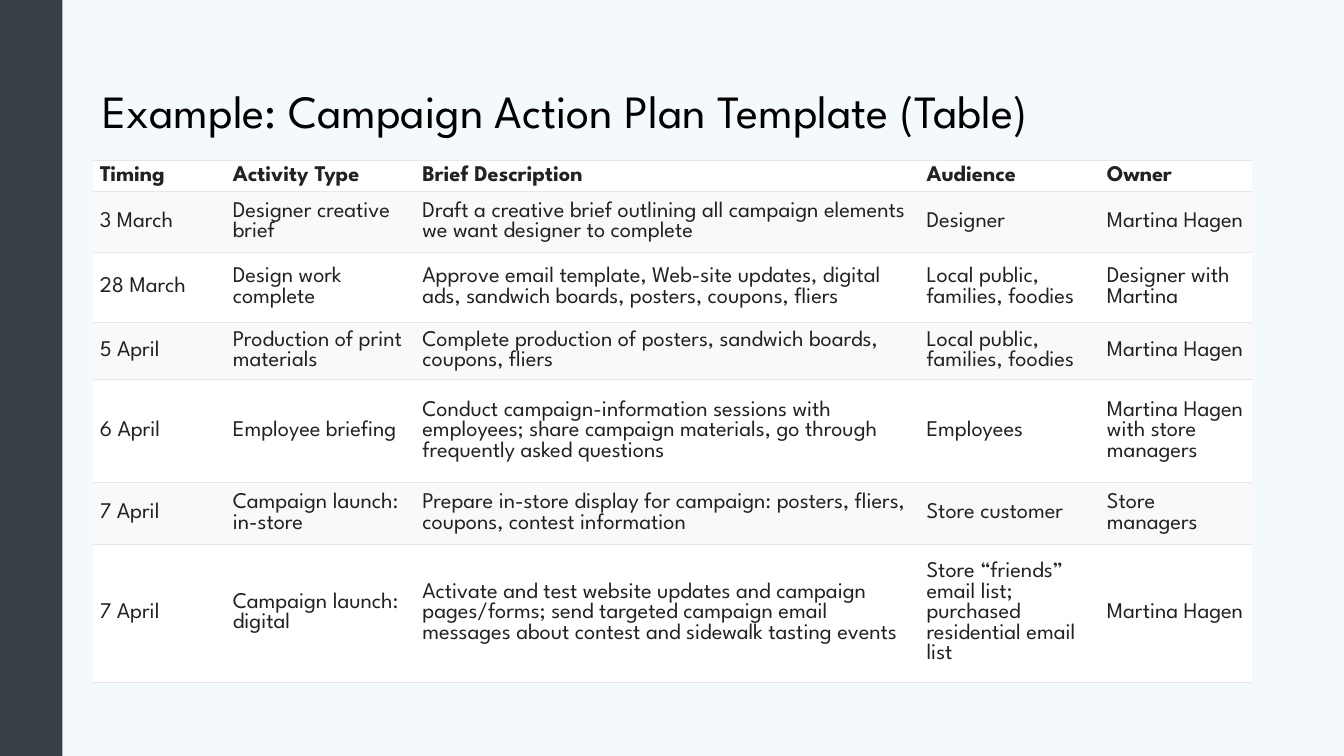
from lxml import etree
from pptx import Presentation
from pptx.dml.color import RGBColor
from pptx.enum import shapes, text
from pptx.oxml import ns
from pptx.util import Inches, Pt

FONT = "League Spartan"
LINE = "E7E7E7"
COLS = [1.32, 1.88, 5, 1.79, 1.51]
HIGHS = [0.2, 0.61, 0.69, 0.53, 1.02, 0.61, 1.02]
PLAN = [
    ["Timing", "Activity Type", "Brief Description", "Audience", "Owner"],
    ["3 March", "Designer creative brief",
     "Draft a creative brief outlining all campaign elements we want designer to complete",
     "Designer", "Martina Hagen"],
    ["28 March", "Design work complete",
     "Approve email template, Web-site updates, digital ads, sandwich boards, posters, coupons, fliers",
     "Local public, families, foodies", "Designer with Martina"],
    ["5 April", "Production of print materials",
     "Complete production of posters, sandwich boards, coupons, fliers",
     "Local public, families, foodies", "Martina Hagen"],
    ["6 April", "Employee briefing",
     "Conduct campaign-information sessions with employees; share campaign materials, "
     "go through frequently asked questions",
     "Employees", "Martina Hagen with store managers"],
    ["7 April", "Campaign launch: in-store",
     "Prepare in-store display for campaign: posters, fliers, coupons, contest information",
     "Store customer", "Store managers"],
    ["7 April", "Campaign launch: digital",
     "Activate and test website updates and campaign pages/forms; send targeted campaign email "
     "messages about contest and sidewalk tasting events",
     "Store “friends” email list; purchased residential email list", "Martina Hagen"],
]


def paint(fill, color):
    fill.solid()
    fill.fore_color.rgb = RGBColor.from_string(color)


def style(para, size, color, bold=False):
    font = para.font
    font.name, font.size, font.bold = FONT, Pt(size), bold
    font.color.rgb = RGBColor.from_string(color)


def border(cell):
    props = cell._tc.get_or_add_tcPr()
    for spot, side in enumerate("LRTB"):
        line = etree.Element(ns.qn(f"a:ln{side}"), w=str(Pt(0.75)))
        if side in "TB":
            solid = etree.SubElement(line, ns.qn("a:solidFill"))
            etree.SubElement(solid, ns.qn("a:srgbClr"), val=LINE)
        else:
            etree.SubElement(line, ns.qn("a:noFill"))
        props.insert(spot, line)


def sidebar(slide, left, top, width, height):
    bar = slide.shapes.add_shape(
        shapes.MSO_SHAPE.RECTANGLE, Inches(left), Inches(top), Inches(width), Inches(height))
    bar.shadow.inherit = False
    paint(bar.fill, "3A4047")
    bar.line.fill.background()


def heading(slide, left, top, width, height):
    box = slide.shapes.add_textbox(Inches(left), Inches(top), Inches(width), Inches(height))
    frame = box.text_frame
    frame.word_wrap = True
    frame.vertical_anchor = text.MSO_ANCHOR.MIDDLE
    para = frame.paragraphs[0]
    para.text = "Example: Campaign Action Plan Template (Table)"
    para.line_spacing = 0.9
    style(para, 33, "000000")


def schedule(slide, left, top, width, height):
    table = slide.shapes.add_table(
        len(PLAN), len(COLS), Inches(left), Inches(top), Inches(width), Inches(height)).table
    table.first_row = table.horz_banding = False
    for col, size in zip(table.columns, COLS):
        col.width = Inches(width * size / sum(COLS))
    for num, (row, size, words) in enumerate(zip(table.rows, HIGHS, PLAN)):
        row.height = Inches(height * size / sum(HIGHS))
        for cell, word in zip(row.cells, words):
            cell.text = word
            cell.vertical_anchor = text.MSO_ANCHOR.MIDDLE
            cell.margin_left = cell.margin_right = Inches(0.07)
            cell.margin_top = cell.margin_bottom = Inches(0.02)
            paint(cell.fill, "F9F9F9" if num % 2 else "FFFFFF")
            border(cell)
            style(cell.text_frame.paragraphs[0], 16, "222222", num == 0)


def main():
    deck = Presentation()
    deck.slide_width, deck.slide_height = Inches(13.33), Inches(7.5)
    slide = deck.slides.add_slide(deck.slide_layouts[6])
    paint(slide.background.fill, "F4F9FC")
    sidebar(slide, 0, 0, 0.62, 7.5)
    heading(slide, 0.92, 0.4, 11.5, 1.45)
    schedule(slide, 0.92, 1.59, 11.5, sum(HIGHS))
    deck.save("out.pptx")


if __name__ == "__main__":
    main()
